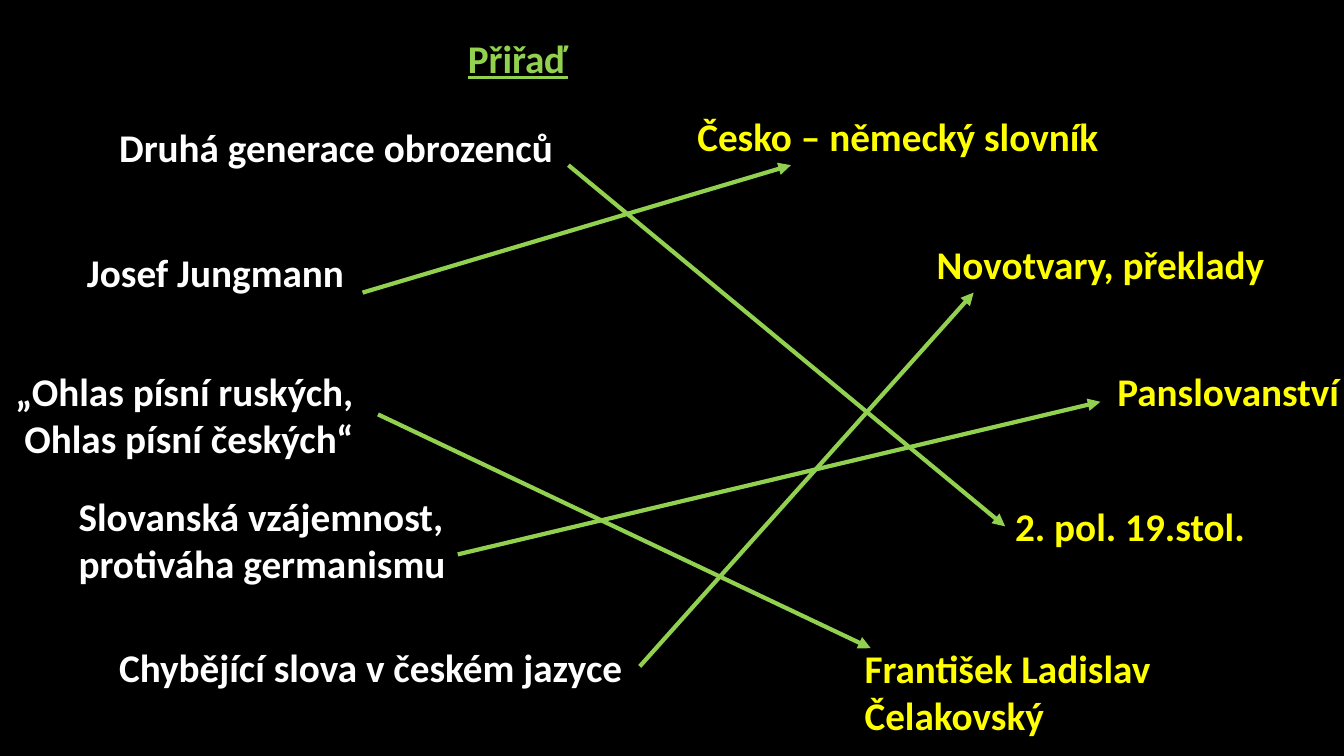
import pptx
import pptx.util
import pptx.dml.color
import pptx.enum.shapes
import pptx.enum.text
import pptx.oxml
import pptx.oxml.ns

Pt = pptx.util.Pt
GREEN, WHITE, YELLOW, BLACK = "92D050", "FFFFFF", "FFFF00", "000000"
LINE_HEIGHT = 34
BOX_PADDING = 7

# text, left and top within the column, width, number of lines
TERMS = [
    ("Druhá generace obrozenců", 74, 0, 329, 1),
    ("Josef Jungmann", 51, 89, 215, 1),
    ("„Ohlas písní ruských,\v Ohlas písní českých“", 0, 174, 266, 2),
    ("Slovanská vzájemnost, protiváha germanismu", 45, 263.5, 292, 2),
    ("Chybějící slova v českém jazyce", 74, 371.5, 380, 1),
]
ANSWERS = [
    ("Česko – německý slovník", 0, 0, 315, 1),
    ("Novotvary, překlady", 171, 91, 289, 1),
    ("Panslovanství", 300, 181.5, 177, 1),
    ("2. pol. 19.stol.", 227, 278, 181, 1),
    ("František Ladislav Čelakovský", 119.5, 380, 236, 2),
]
# start and end of each arrow
MATCHES = [
    (406, 118, 718, 376),
    (259, 209, 565, 118),
    (270, 296, 622, 463),
    (327, 396, 786, 287),
    (457, 476, 695.5, 209),
]


def color(value):
    return pptx.dml.color.RGBColor.from_string(value)


def set_attributes(target, values):
    for name, value in values.items():
        setattr(target, name, value)


def format_text(shape, text, font_color, underline=None):
    frame = shape.text_frame
    frame.text = text
    set_attributes(frame, {
        "word_wrap": True,
        "auto_size": pptx.enum.text.MSO_AUTO_SIZE.NONE,
        "vertical_anchor": pptx.enum.text.MSO_ANCHOR.TOP,
    })
    paragraph = frame.paragraphs[0]
    set_attributes(paragraph, {
        "alignment": pptx.enum.text.PP_ALIGN.LEFT,
        "line_spacing": 1.0,
        "space_before": Pt(0),
    })
    for run in paragraph.runs:
        set_attributes(run.font, {
            "name": "Calibri", "size": Pt(28), "bold": True, "underline": underline,
        })
        run.font.color.rgb = color(font_color)


def add_title(slide, left, top, width, height):
    title = slide.shapes.title
    set_attributes(title, {
        "left": Pt(left), "top": Pt(top), "width": Pt(width), "height": Pt(height),
    })
    format_text(title, "Přiřaď", GREEN, underline=True)


def add_column(slide, left, top, items, font_color):
    for text, offset_left, offset_top, width, lines in items:
        shape = slide.shapes.add_textbox(
            Pt(left + offset_left), Pt(top + offset_top),
            Pt(width), Pt(lines * LINE_HEIGHT + BOX_PADDING))
        format_text(shape, text, font_color)


def add_matches(slide, left, top, matches):
    for start_x, start_y, end_x, end_y in matches:
        connector = slide.shapes.add_connector(
            pptx.enum.shapes.MSO_CONNECTOR.STRAIGHT,
            Pt(left + start_x), Pt(top + start_y), Pt(left + end_x), Pt(top + end_y))
        connector.line.width = Pt(3)
        connector.line.color.rgb = color(GREEN)
        arrowhead = pptx.oxml.parse_xml(
            f'<a:tailEnd {pptx.oxml.ns.nsdecls("a")} type="triangle"/>')
        connector.line._get_or_add_ln().append(arrowhead)
        properties = connector._element.spPr
        properties.append(pptx.oxml.parse_xml(
            f'<a:effectLst {pptx.oxml.ns.nsdecls("a")}/>'))


def main():
    presentation = pptx.Presentation()
    set_attributes(presentation, {"slide_width": Pt(960), "slide_height": Pt(540)})
    slide = presentation.slides.add_slide(presentation.slide_layouts.get_by_name("Title Only"))
    background = slide.background.fill
    background.solid()
    background.fore_color.rgb = color(BLACK)
    add_title(slide, 327, 21, 142, 41)
    add_column(slide, 4, 84.5, TERMS, WHITE)
    add_column(slide, 491, 77, ANSWERS, YELLOW)
    add_matches(slide, 0, 0, MATCHES)
    presentation.save("out.pptx")


if __name__ == "__main__":
    main()
